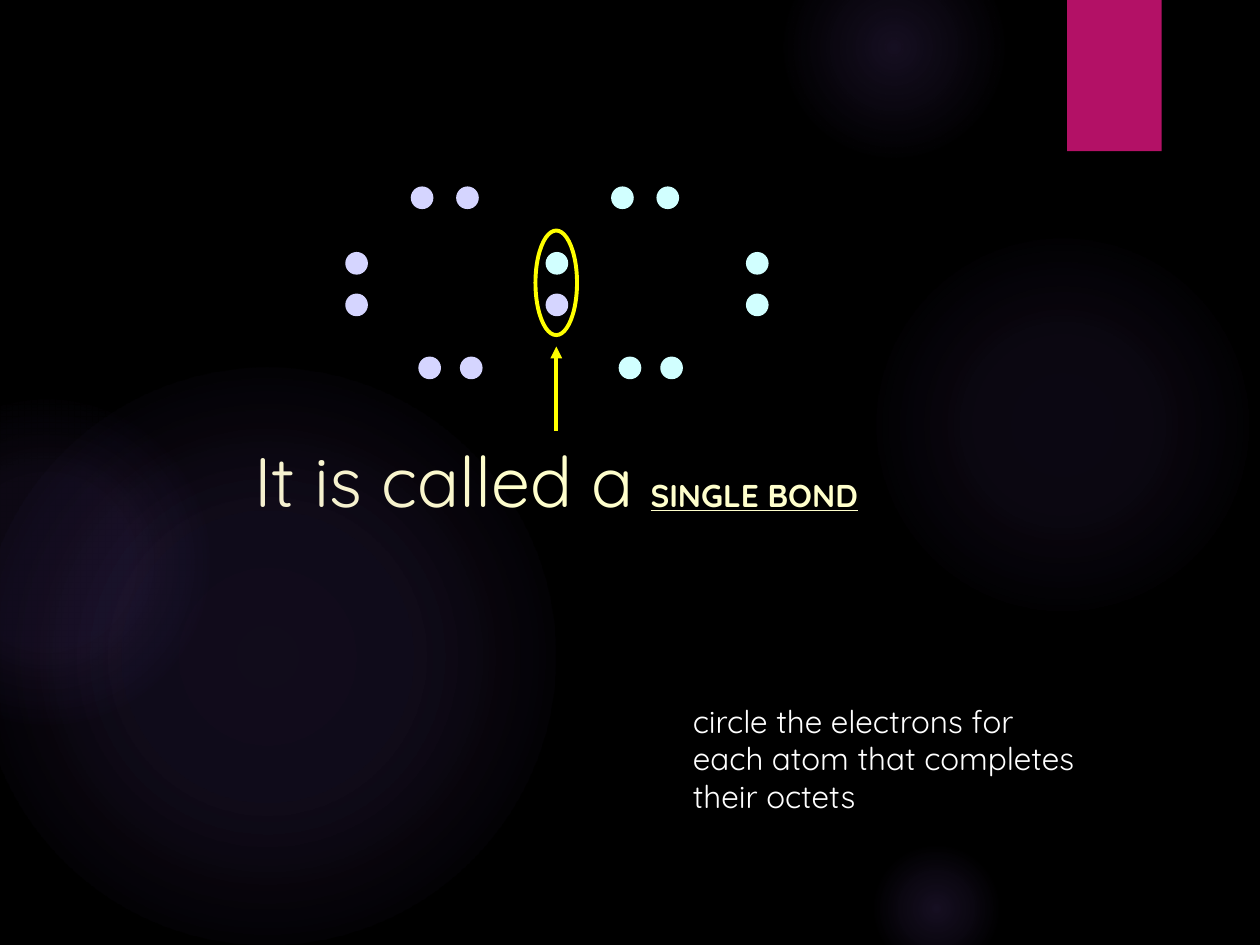
from lxml.etree import SubElement
from pptx import Presentation
from pptx.dml.color import RGBColor
from pptx.enum.shapes import MSO_CONNECTOR, MSO_SHAPE
from pptx.enum.text import MSO_ANCHOR, MSO_AUTO_SIZE, PP_ALIGN
from pptx.oxml import parse_xml
from pptx.oxml.ns import nsdecls, qn
from pptx.util import Inches, Pt

BLACK = RGBColor(0x00, 0x00, 0x00)
WHITE = RGBColor(0xFF, 0xFF, 0xFF)
CREAM = RGBColor(0xFF, 0xFF, 0xCC)
YELLOW = RGBColor(0xFF, 0xFF, 0x00)
MAGENTA = RGBColor(0xB3, 0x11, 0x66)
LILAC = RGBColor(0xD5, 0xD5, 0xFF)
AQUA = RGBColor(0xD1, 0xFF, 0xFF)
GLOW = RGBColor(0x9B, 0x6B, 0xF2)
FONT = "Quicksand"
DOT_SIZE = 0.18
SHELL_WIDTH = 1.59


def add_run(paragraph, text, size, color, bold=False, underline=False):
    run = paragraph.add_run()
    run.text = text
    font = run.font
    font.name = FONT
    font.size = Pt(size)
    font.color.rgb = color
    font.bold = bold
    font.underline = underline


def prepare_frame(shape):
    frame = shape.text_frame
    frame.word_wrap = False
    frame.auto_size = MSO_AUTO_SIZE.NONE
    frame.vertical_anchor = MSO_ANCHOR.TOP
    return frame


def add_text(slide, text, box, **text_format):
    frame = prepare_frame(slide.shapes.add_textbox(*map(Inches, box)))
    for index, line in enumerate(text.split("\n")):
        paragraph = frame.add_paragraph() if index else frame.paragraphs[0]
        add_run(paragraph, line, **text_format)


def add_plain_shape(slide, kind, box, fill=None, line=None):
    shape = slide.shapes.add_shape(kind, *map(Inches, box))
    shape.shadow.inherit = False
    if fill is None:
        shape.fill.background()
    else:
        shape.fill.solid()
        shape.fill.fore_color.rgb = fill
    if line is None:
        shape.line.fill.background()
    else:
        shape.line.color.rgb = line
        shape.line.width = Pt(2.25)
    return shape


def add_glow(slide, left, top, size, stops):
    shape = add_plain_shape(slide, MSO_SHAPE.OVAL, (left, top, size, size))
    stop_xml = "".join(
        f'<a:gs pos="{position * 1000}"><a:srgbClr val="{GLOW}">'
        f'<a:alpha val="{alpha * 1000}"/></a:srgbClr></a:gs>'
        for position, alpha in stops
    )
    gradient = parse_xml(
        f'<a:gradFill {nsdecls("a")}><a:gsLst>{stop_xml}</a:gsLst>'
        '<a:path path="circle"><a:fillToRect l="50000" t="50000" '
        'r="50000" b="50000"/></a:path></a:gradFill>'
    )
    properties = shape._element.spPr
    properties.replace(properties.find(qn("a:noFill")), gradient)


def add_backdrop(slide):
    slide.background.fill.solid()
    slide.background.fill.fore_color.rgb = BLACK
    for left, top, size, center, middle, edge in (
        (6.89, 1.83, 3.08, 7, 6, 69),
        (6.22, -0.5, 1.75, 14, 7, 73),
        (6.89, 6.67, 1.08, 14, 7, 66),
        (-0.17, 2.92, 4.58, 11, 10, 75),
        (-0.92, 3.17, 2.58, 8, 8, 72),
    ):
        add_glow(slide, left, top, size, ((0, center), (36, middle), (edge, 0)))
    add_plain_shape(slide, MSO_SHAPE.RECTANGLE, (8.47, 0, 0.75, 1.2), MAGENTA)


def add_electrons(slide, left, top, color, shared_dot):
    sides = [(x, y) for x in (0, SHELL_WIDTH) for y in (0.52, 0.85)]
    above = [(x, 0) for x in (0.52, 0.88)]
    below = [(x, 1.35) for x in (0.58, 0.91)]
    del sides[shared_dot]
    for x, y in sides + above + below:
        add_plain_shape(
            slide, MSO_SHAPE.OVAL, (left + x, top + y, DOT_SIZE, DOT_SIZE), color
        )


def add_bond_marker(slide, left, top, width, height):
    add_plain_shape(
        slide, MSO_SHAPE.OVAL, (left, top, width, height), line=YELLOW
    )
    center = Inches(left + width / 2)
    arrow = slide.shapes.add_connector(
        MSO_CONNECTOR.STRAIGHT,
        center, Inches(top + 1.59), center, Inches(top + 0.92),
    )
    arrow.line.color.rgb = YELLOW
    arrow.line.width = Pt(2.25)
    SubElement(arrow.line._get_or_add_ln(), qn("a:tailEnd"), type="triangle")
    SubElement(arrow._element.spPr, qn("a:effectLst"))


def add_title(slide, left, top, width, height):
    title = slide.shapes.title
    title.left, title.top = Inches(left), Inches(top)
    title.width, title.height = Inches(width), Inches(height)
    paragraph = prepare_frame(title).paragraphs[0]
    paragraph.alignment = PP_ALIGN.LEFT
    add_run(paragraph, "It is called a", size=40, color=CREAM)
    add_run(paragraph, " ", size=36, color=CREAM)
    add_run(
        paragraph, "SINGLE BOND", size=18, color=CREAM, bold=True, underline=True
    )


def main():
    presentation = Presentation()
    presentation.slide_width = Inches(10)
    presentation.slide_height = Inches(7.5)
    slide = presentation.slides.add_slide(presentation.slide_layouts[5])
    add_backdrop(slide)
    add_electrons(slide, 2.74, 1.48, LILAC, shared_dot=2)
    add_electrons(slide, 2.74 + SHELL_WIDTH, 1.48, AQUA, shared_dot=1)
    add_text(
        slide,
        "circle the electrons for\neach atom that completes\ntheir octets",
        (5.4, 5.52, 4.71, 1.7),
        size=18,
        color=WHITE,
    )
    add_bond_marker(slide, 4.25, 1.83, 0.33, 0.83)
    add_title(slide, 1.92, 3.42, 5.2, 0.77)
    presentation.save("out.pptx")


if __name__ == "__main__":
    main()
